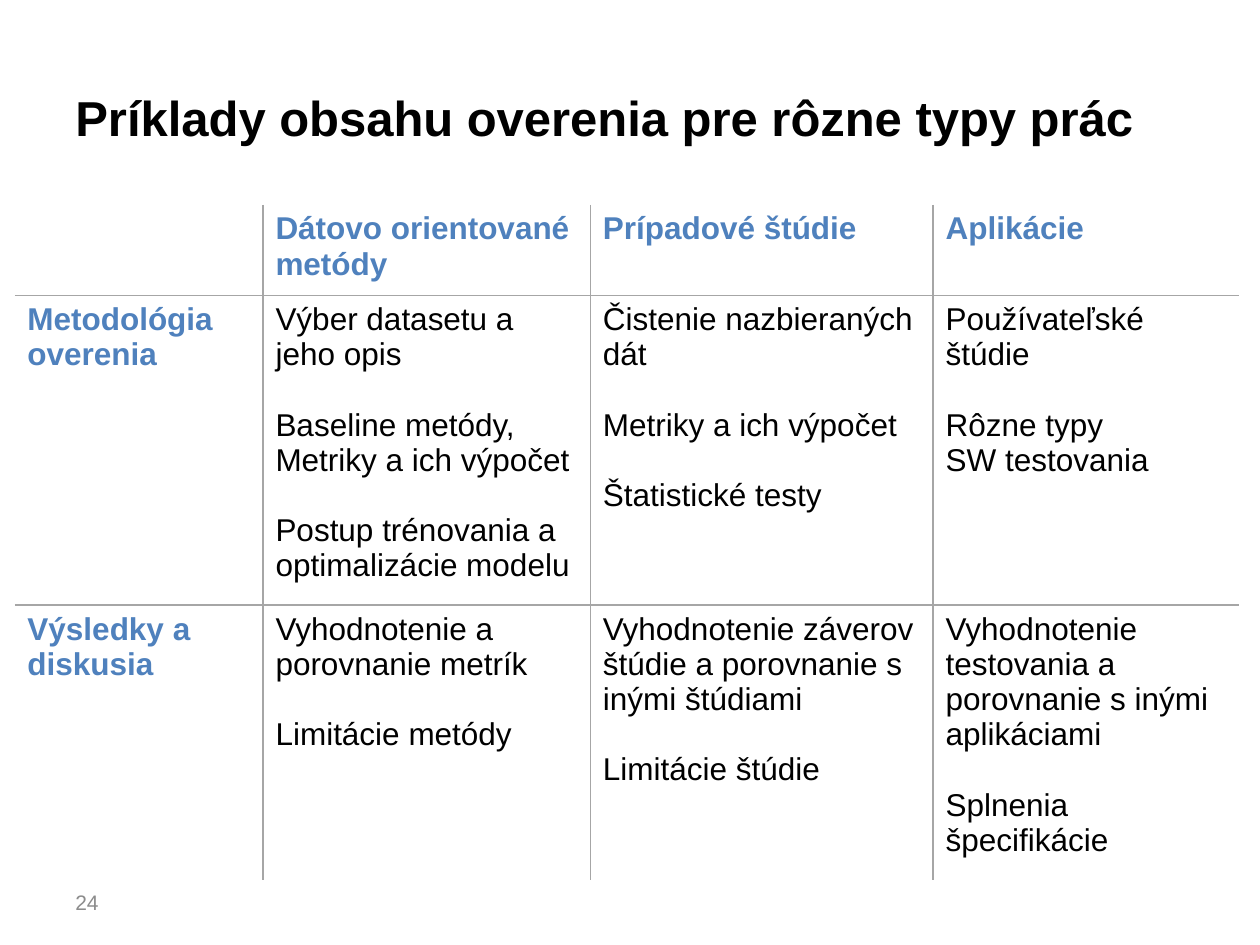
from lxml.etree import SubElement
from pptx import Presentation
from pptx.dml.color import RGBColor
from pptx.enum.text import MSO_ANCHOR
from pptx.oxml import parse_xml
from pptx.oxml.ns import nsdecls, qn
from pptx.util import Cm, Pt

COLORS = {"text": "000000", "head": "4F81BD", "rule": "A6A6A6", "number": "8C8C8C"}
COL_WIDTHS = [5, 6.6, 6.91, 6.17]
ROW_HEIGHTS = [1.83, 5.94, 5.23]
ROWS = [
    [[], ["Dátovo orientované metódy"], ["Prípadové štúdie"], ["Aplikácie"]],
    [
        ["Metodológia overenia"],
        ["Výber datasetu a jeho opis", "Baseline metódy, Metriky a ich výpočet",
         "Postup trénovania a optimalizácie modelu"],
        ["Čistenie nazbieraných dát", "Metriky a ich výpočet", "Štatistické testy"],
        ["Používateľské štúdie", "Rôzne typy\nSW testovania"],
    ],
    [
        ["Výsledky a diskusia"],
        ["Vyhodnotenie a porovnanie metrík", "Limitácie metódy"],
        ["Vyhodnotenie záverov štúdie a porovnanie s inými štúdiami", "Limitácie štúdie"],
        ["Vyhodnotenie testovania a porovnanie s inými aplikáciami", "Splnenia špecifikácie"],
    ],
]


class Deck:
    font = "Arial"
    table_size = 18
    block_gap = 20

    def __init__(self):
        self.prs = Presentation()
        self.prs.slide_width, self.prs.slide_height = Cm(25.4), Cm(19.05)
        self.s = self.prs.slides.add_slide(self.prs.slide_layouts[6])

    def run(self, p, text, size, color, bold=False):
        r = p.add_run()
        r.text = text
        r.font.name, r.font.size, r.font.bold = self.font, Pt(size), bold
        r.font.color.rgb = RGBColor.from_string(COLORS[color])

    def text(self, box, text, size, color, bold=False):
        tf = self.s.shapes.add_textbox(*map(Cm, box)).text_frame
        tf.word_wrap = True
        tf.vertical_anchor = MSO_ANCHOR.MIDDLE
        self.run(tf.paragraphs[0], text, size, color, bold)

    def blocks(self, tf, blocks, color, bold):
        for i, block in enumerate(blocks):
            for j, line in enumerate(block.split("\n")):
                p = tf.add_paragraph() if i or j else tf.paragraphs[0]
                if i and not j:
                    p.space_before = Pt(self.block_gap)
                self.run(p, line, self.table_size, color, bold)

    def borders(self, cell, sides):
        tcPr = cell._tc.get_or_add_tcPr()
        for i, (side, shown) in enumerate(sides.items()):
            ln = parse_xml(f'<a:ln{side} {nsdecls("a")} w="{Pt(1)}"/>')
            if shown:
                fill = SubElement(ln, qn("a:solidFill"))
                SubElement(fill, qn("a:srgbClr"), val=COLORS["rule"])
            else:
                SubElement(ln, qn("a:noFill"))
            tcPr.insert(i, ln)

    def table(self, left, top, widths, heights, rows):
        last_row, last_col = len(heights) - 1, len(widths) - 1
        size = Cm(sum(widths)), Cm(sum(heights))
        frame = self.s.shapes.add_table(len(heights), len(widths), Cm(left), Cm(top), *size)
        table = frame.table
        table.first_row = table.horz_banding = False
        for column, width in zip(table.columns, widths):
            column.width = Cm(width)
        for i, (height, row) in enumerate(zip(heights, rows)):
            table.rows[i].height = Cm(height)
            for j, blocks in enumerate(row):
                cell = table.cell(i, j)
                cell.fill.background()
                head = i == 0 or j == 0
                self.blocks(cell.text_frame, blocks, "head" if head else "text", head)
                self.borders(cell, {"L": j > 0, "R": j < last_col, "T": i > 0, "B": i < last_row})


def main():
    deck = Deck()
    deck.text((1.27, 0.76, 22.86, 3.18), "Príklady obsahu overenia pre rôzne typy prác", 28, "text", True)
    deck.table(0.3, 4.13, COL_WIDTHS, ROW_HEIGHTS, ROWS)
    deck.text((1.27, 17.68, 5.92, 1.02), "24", 12, "number")
    deck.prs.save("out.pptx")


if __name__ == "__main__":
    main()
